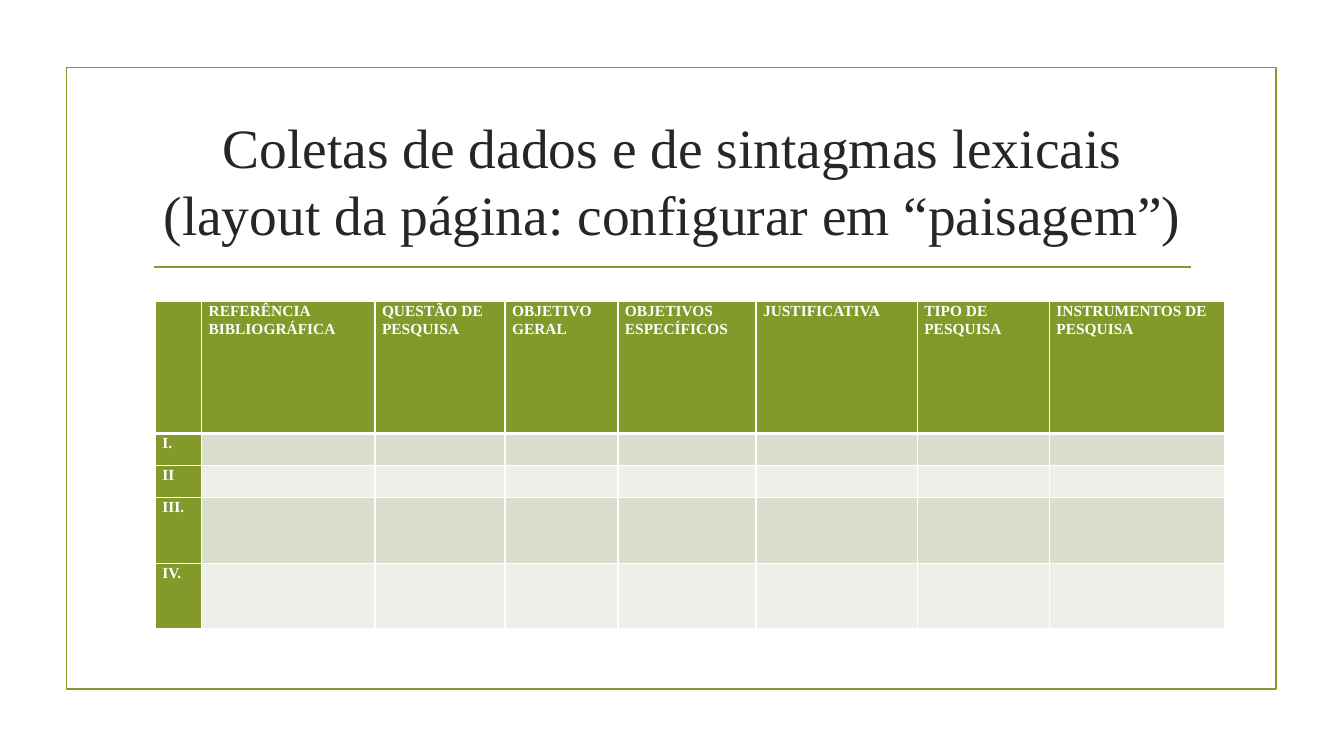
from dataclasses import dataclass

from lxml import etree
from pptx import Presentation
from pptx import util as u
from pptx.dml.color import RGBColor
from pptx.enum import shapes, text
from pptx.oxml import ns


@dataclass(frozen=True)
class Theme:
    font: str = "Times New Roman"
    accent: str = "83992A"
    title: str = "262626"
    white: str = "FFFFFF"
    bands: tuple = ("D9DECD", "EDEFE8")
    title_size: float = 39.6
    table_size: float = 11
    rule: float = 1.25
    grid_line: float = 1
    header_line: float = 3


class SlideBuilder:
    def __init__(self, deck, theme):
        self.deck = deck
        self.theme = theme
        self.slide = deck.slides.add_slide(deck.slide_layouts[6])

    def x(self, percent):
        return round(self.deck.slide_width * percent / 100)

    def y(self, percent):
        return round(self.deck.slide_height * percent / 100)

    def area(self, left, top, width, height):
        return self.x(left), self.y(top), self.x(width), self.y(height)

    def outline(self, line):
        line.color.rgb = RGBColor.from_string(self.theme.accent)
        line.width = u.Pt(self.theme.rule)

    def style(self, paragraph, size, color, bold=False):
        font = paragraph.font
        font.name = self.theme.font
        font.size = u.Pt(size)
        font.bold = bold
        font.color.rgb = RGBColor.from_string(color)

    def frame(self, *place):
        border = self.slide.shapes.add_shape(
            shapes.MSO_SHAPE.RECTANGLE, *self.area(*place))
        border.shadow.inherit = False
        border.fill.background()
        self.outline(border.line)

    def divider(self, left, right, top):
        rule = self.slide.shapes.add_connector(
            shapes.MSO_CONNECTOR.STRAIGHT,
            self.x(left), self.y(top), self.x(right), self.y(top))
        self.outline(rule.line)
        etree.SubElement(rule._element.spPr, ns.qn("a:effectLst"))

    def title(self, wording, *place):
        heading = self.slide.shapes.add_textbox(*self.area(*place)).text_frame
        heading.word_wrap = True
        heading.vertical_anchor = text.MSO_ANCHOR.MIDDLE
        paragraph = heading.paragraphs[0]
        paragraph.text = wording
        paragraph.alignment = text.PP_ALIGN.CENTER
        self.style(paragraph, self.theme.title_size, self.theme.title)

    def cell_borders(self, cell, **widths):
        properties = cell._tc.get_or_add_tcPr()
        for side in ("L", "R", "T", "B"):
            width = widths.get(side, self.theme.grid_line)
            edge = etree.SubElement(
                properties, ns.qn(f"a:ln{side}"), w=str(u.Pt(width)))
            paint = etree.SubElement(edge, ns.qn("a:solidFill"))
            etree.SubElement(paint, ns.qn("a:srgbClr"), val=self.theme.white)

    def cell(self, cell, wording, row, column):
        heavy = self.theme.header_line
        self.cell_borders(cell, **({0: {"B": heavy}, 1: {"T": heavy}}.get(row, {})))
        is_label = row == 0 or column == 0
        color = self.theme.accent if is_label else self.theme.bands[(row - 1) % 2]
        cell.fill.solid()
        cell.fill.fore_color.rgb = RGBColor.from_string(color)
        cell.margin_left = cell.margin_right = u.Inches(0.07)
        cell.margin_top = cell.margin_bottom = 0
        paragraph = cell.text_frame.paragraphs[0]
        paragraph.text = wording
        paragraph.line_spacing = 1.07
        self.style(paragraph, self.theme.table_size, self.theme.white, bold=True)

    def table(self, headers, labels, column_shares, row_shares, *place):
        left, top, width, height = self.area(*place)
        grid = self.slide.shapes.add_table(
            len(row_shares), len(column_shares), left, top, width, height).table
        for column, share in zip(grid.columns, column_shares):
            column.width = round(width * share / sum(column_shares))
        for row, share in zip(grid.rows, row_shares):
            row.height = round(height * share / sum(row_shares))
        blanks = [""] * (len(headers) - 1)
        contents = [headers] + [[label] + blanks for label in labels]
        for r, wordings in enumerate(contents):
            for c, wording in enumerate(wordings):
                self.cell(grid.cell(r, c), wording, r, c)


def main():
    deck = Presentation()
    deck.slide_width, deck.slide_height = u.Inches(13.33), u.Inches(7.5)
    page = SlideBuilder(deck, Theme())
    page.frame(4.95, 8.93, 90.02, 82.27)
    page.divider(11.48, 88.6, 35.33)
    page.title(
        "Coletas de dados e de sintagmas lexicais\n"
        "(layout da página: configurar em “paisagem”)",
        10.65, 14.27, 78.77, 19.07)
    page.table(
        ["", "REFERÊNCIA BIBLIOGRÁFICA", "QUESTÃO DE PESQUISA", "OBJETIVO GERAL",
         "OBJETIVOS ESPECÍFICOS", "JUSTIFICATIVA", "TIPO DE PESQUISA",
         "INSTRUMENTOS DE PESQUISA"],
        ["I.", "II", "III.", "IV."],
        [46, 172, 129, 112, 137, 160, 131, 174],
        [131, 32, 32, 65, 65],
        11.55, 39.87, 79.59, 43.33)
    deck.save("out.pptx")


if __name__ == "__main__":
    main()
